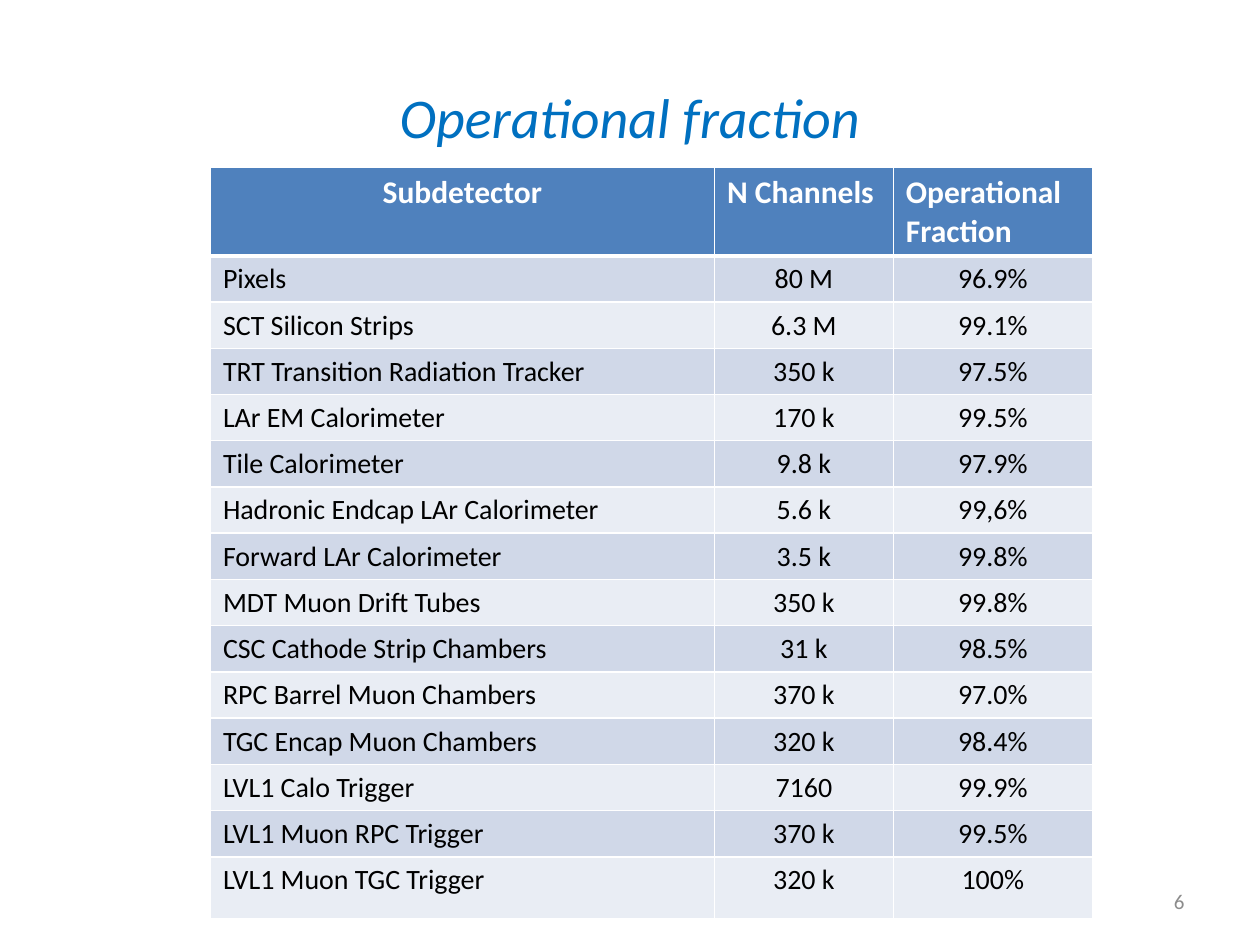
"""Build a slide with a table of subdetector operational fractions."""
from lxml.etree import SubElement
from pptx import Presentation
from pptx.dml.color import RGBColor
from pptx.enum.text import MSO_ANCHOR, PP_ALIGN
from pptx.oxml.ns import qn
from pptx.util import Inches, Pt

TITLE = "Operational fraction"
PAGE_NUMBER = "6"
HEADER = ["Subdetector", "N Channels", "Operational\nFraction"]
DETECTORS = [
    ("Pixels", "80 M", "96.9%"),
    ("SCT Silicon Strips", "6.3 M", "99.1%"),
    ("TRT Transition Radiation Tracker", "350 k", "97.5%"),
    ("LAr EM Calorimeter", "170 k", "99.5%"),
    ("Tile Calorimeter", "9.8 k", "97.9%"),
    ("Hadronic Endcap LAr Calorimeter", "5.6 k", "99,6%"),
    ("Forward LAr Calorimeter", "3.5 k", "99.8%"),
    ("MDT Muon Drift Tubes", "350 k", "99.8%"),
    ("CSC Cathode Strip Chambers", "31 k", "98.5%"),
    ("RPC Barrel Muon Chambers", "370 k", "97.0%"),
    ("TGC Encap Muon Chambers", "320 k", "98.4%"),
    ("LVL1 Calo Trigger", "7160", "99.9%"),
    ("LVL1 Muon RPC Trigger", "370 k", "99.5%"),
    ("LVL1 Muon TGC Trigger", "320 k", "100%"),
]
COLUMN_WIDTHS = [4, 1.42, 1.58]
ROW_HEIGHTS = [0.67] + [0.35] * (len(DETECTORS) - 1) + [0.49]
HEADER_FILL = "4F81BD"
BAND_FILLS = ["D0D8E8", "E9EDF4"]
LEFT, CENTER, RIGHT = PP_ALIGN.LEFT, PP_ALIGN.CENTER, PP_ALIGN.RIGHT


def color(value):
    return RGBColor.from_string(value)


def write(frame, text, size, ink, align, bold=False, italic=False):
    for index, line in enumerate(text.split("\n")):
        para = frame.add_paragraph() if index else frame.paragraphs[0]
        para.alignment = align
        span = para.add_run()
        span.text = line
        font = span.font
        font.name, font.size = "Calibri", Pt(size)
        font.bold, font.italic = bold, italic
        font.color.rgb = color(ink)


def place(box, left, top, width, height):
    box.left, box.top = Inches(left), Inches(top)
    box.width, box.height = Inches(width), Inches(height)
    box.text_frame.word_wrap = True
    box.text_frame.vertical_anchor = MSO_ANCHOR.MIDDLE


def set_borders(cell, bottom):
    properties = cell._tc.get_or_add_tcPr()
    widths = {"a:lnL": 1, "a:lnR": 1, "a:lnT": 1, "a:lnB": bottom}
    for name, width in widths.items():
        line = SubElement(properties, qn(name), w=str(Pt(width)))
        fill = SubElement(line, qn("a:solidFill"))
        SubElement(fill, qn("a:srgbClr"), val="FFFFFF")


def add_detector_table(page):
    rows = [HEADER] + DETECTORS
    table = page.shapes.add_table(
        len(rows), len(HEADER), Inches(1.67), Inches(1.33),
        Inches(sum(COLUMN_WIDTHS)), Inches(sum(ROW_HEIGHTS))).table
    for column, width in zip(table.columns, COLUMN_WIDTHS):
        column.width = Inches(width)
    for row, height in zip(table.rows, ROW_HEIGHTS):
        row.height = Inches(height)
    for r, values in enumerate(rows):
        header = r == 0
        for c, text in enumerate(values):
            cell = table.cell(r, c)
            set_borders(cell, 3 if header else 1)
            cell.fill.solid()
            cell.fill.fore_color.rgb = color(HEADER_FILL if header else BAND_FILLS[(r - 1) % 2])
            align = CENTER if header == (c == 0) else LEFT
            size, ink = (18, "FFFFFF") if header else (16, "000000")
            write(cell.text_frame, text, size, ink, align, bold=header)


def main():
    deck = Presentation()
    deck.slide_width, deck.slide_height = Inches(10), Inches(7.5)
    page = deck.slides.add_slide(deck.slide_layouts[5])
    title = page.shapes.title
    place(title, 0.5, 0.3, 9, 1.25)
    write(title.text_frame, TITLE, 32, "0070C0", CENTER, italic=True)
    number = page.shapes.add_textbox(0, 0, 0, 0)
    place(number, 7.17, 6.95, 2.33, 0.4)
    write(number.text_frame, PAGE_NUMBER, 12, "8C8C8C", RIGHT)
    add_detector_table(page)
    deck.save("out.pptx")


if __name__ == "__main__":
    main()
